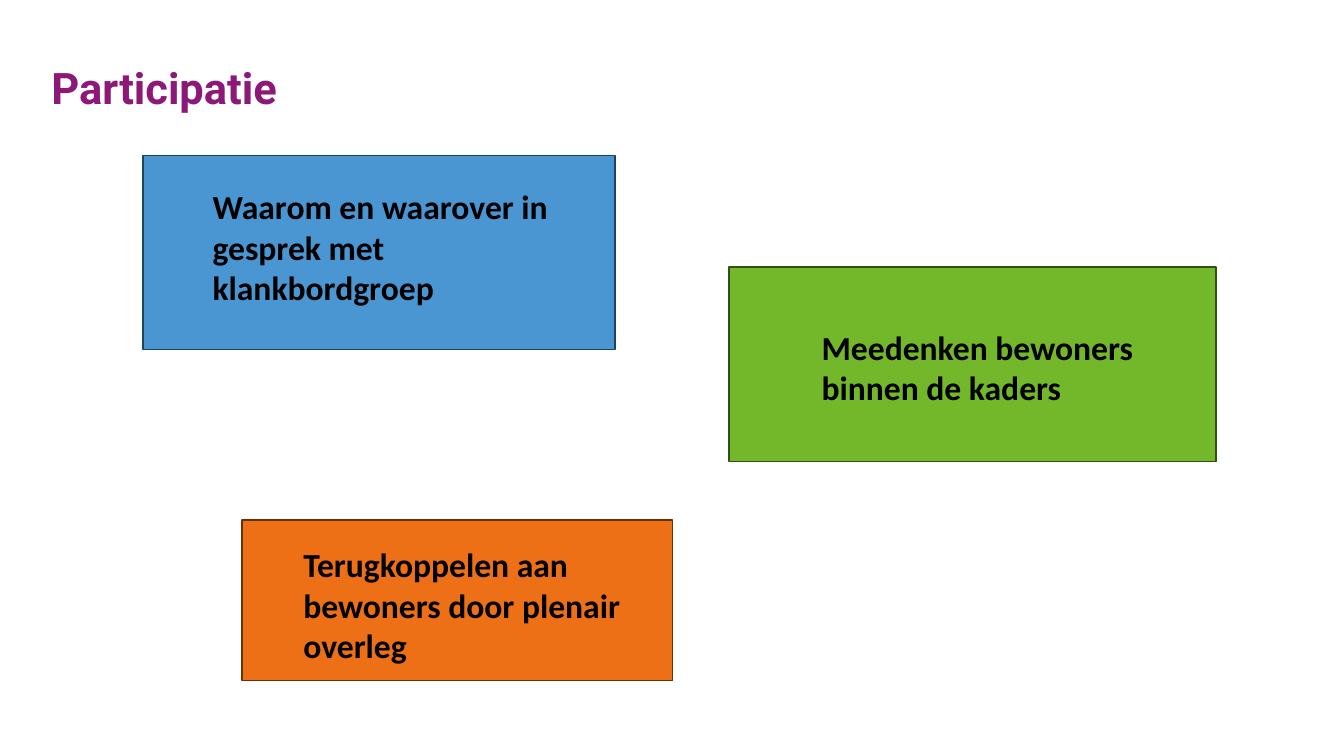
import pptx
import pptx.dml.color
import pptx.enum.shapes
import pptx.enum.text
import pptx.util

RGB = pptx.dml.color.RGBColor
PX = 9144  # 100 px to the inch

BLACK = RGB(0x00, 0x00, 0x00)
PURPLE = RGB(0x8C, 0x19, 0x78)
BLUE = RGB(0x4A, 0x96, 0xD2)
NAVY = RGB(0x20, 0x42, 0x5C)
GREEN = RGB(0x73, 0xB7, 0x2B)
MOSS = RGB(0x32, 0x50, 0x13)
ORANGE = RGB(0xEE, 0x70, 0x16)
BROWN = RGB(0x68, 0x31, 0x0A)

# Each card: box, fill, edge, label box, label
CARDS = [
    ((142, 154, 468, 193), BLUE, NAVY, (201, 180, 372, 130),
     "Waarom en waarover in gesprek met klankbordgroep"),
    ((723, 265, 483, 193), GREEN, MOSS, (805, 319, 372, 90),
     "Meedenken bewoners binnen de kaders"),
    ((240, 516, 427, 159), ORANGE, BROWN, (291, 535, 358, 130),
     "Terugkoppelen aan bewoners door plenair overleg"),
]


def scale(box):
    return [n * PX for n in box]


def write(frame, text, size=24, face="Calibri", color=BLACK, space=None):
    frame.word_wrap = True
    para = frame.paragraphs[0]
    para.alignment = pptx.enum.text.PP_ALIGN.LEFT
    para.line_spacing = space
    run = para.add_run()
    run.text = text
    font = run.font
    font.size = pptx.util.Pt(size)
    font.name = face
    font.bold = True
    font.color.rgb = color


def head(slide, box, text):
    title = slide.shapes.title
    title.left, title.top, title.width, title.height = scale(box)
    frame = title.text_frame
    frame.margin_left = frame.margin_right = 0
    frame.margin_top = frame.margin_bottom = 0
    frame.auto_size = pptx.enum.text.MSO_AUTO_SIZE.NONE
    frame.vertical_anchor = pptx.enum.text.MSO_ANCHOR.BOTTOM
    write(frame, text, size=31, face="Roboto", color=PURPLE, space=0.9)


def card(slide, box, fill, edge, area, text):
    # Coloured panel
    rect = pptx.enum.shapes.MSO_SHAPE.RECTANGLE
    panel = slide.shapes.add_shape(rect, *scale(box))
    panel.shadow.inherit = False
    panel.fill.solid()
    panel.fill.fore_color.rgb = fill
    panel.line.color.rgb = edge
    panel.line.width = pptx.util.Pt(1)
    # Label on top of the panel
    label = slide.shapes.add_textbox(*scale(area))
    write(label.text_frame, text)


def main():
    deck = pptx.Presentation()
    deck.slide_width, deck.slide_height = scale((1333, 750))
    slide = deck.slides.add_slide(deck.slide_layouts.get_by_name("Title Only"))
    head(slide, (51, 26, 1231, 87), "Participatie")
    for item in CARDS:
        card(slide, *item)
    deck.save("out.pptx")


if __name__ == "__main__":
    main()
